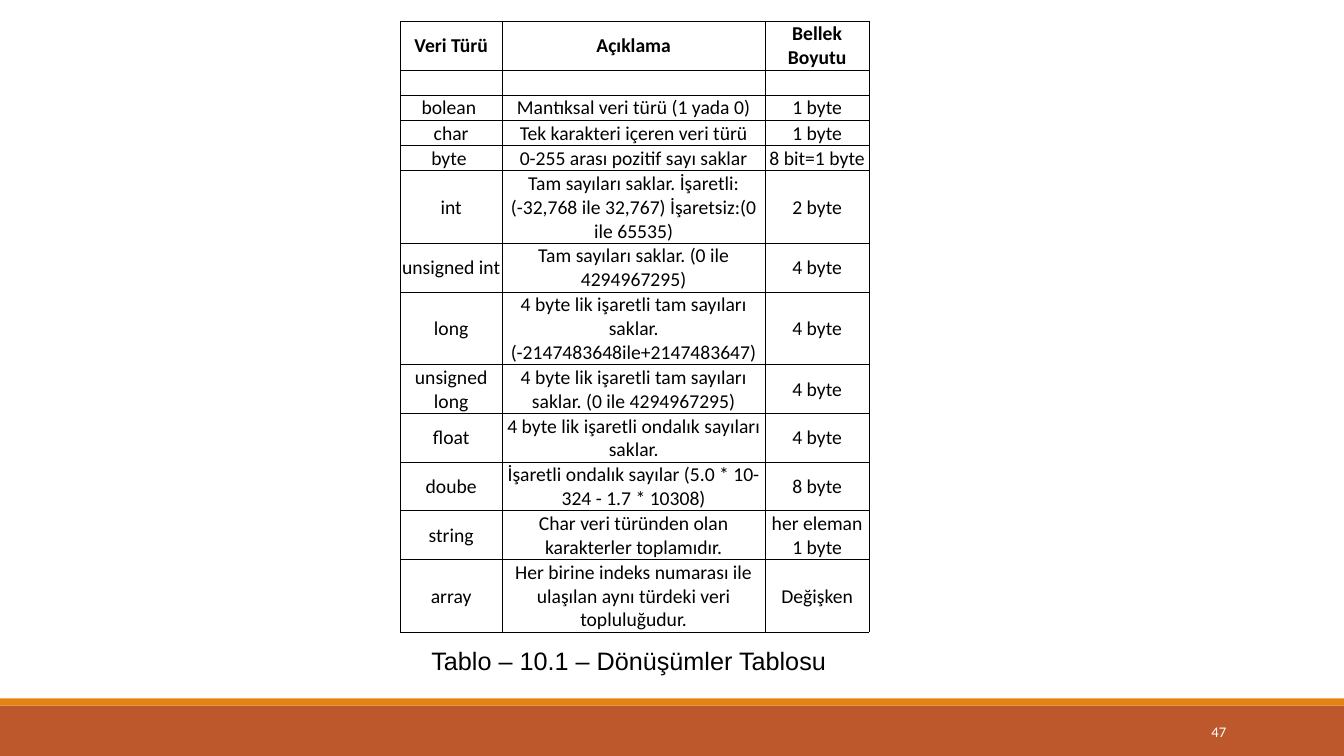
from lxml.etree import SubElement
from pptx import Presentation
from pptx.dml.color import RGBColor
from pptx.enum.shapes import MSO_SHAPE
from pptx.enum.text import MSO_ANCHOR, PP_ALIGN
from pptx.oxml.ns import qn
from pptx.util import Inches, Pt

ROWS = [
    (2, "Veri Türü", "Açıklama", "Bellek Boyutu"),
    (1, "", "", ""),
    (1, "bolean ", "Mantıksal veri türü (1 yada 0)", "1 byte"),
    (1, "char", "Tek karakteri içeren veri türü", "1 byte"),
    (1, "byte ", "0-255 arası pozitif sayı saklar", "8 bit=1 byte"),
    (3, "int", "Tam sayıları saklar. İşaretli: (-32,768 ile 32,767) İşaretsiz:(0 ile 65535)", "2 byte"),
    (2, "unsigned int", "Tam sayıları saklar. (0 ile 4294967295)", "4 byte"),
    (3, "long", "4 byte lik işaretli tam sayıları saklar. (-2147483648ile+2147483647)", "4 byte"),
    (2, "unsigned long", "4 byte lik işaretli tam sayıları saklar. (0 ile 4294967295)", "4 byte"),
    (2, "float", "4 byte lik işaretli ondalık sayıları saklar.", "4 byte"),
    (2, "doube", "İşaretli ondalık sayılar (5.0 * 10-324 - 1.7 * 10308)", "8 byte"),
    (2, "string", "Char veri türünden olan karakterler toplamıdır.", "her eleman 1 byte"),
    (3, "array", "Her birine indeks numarası ile ulaşılan aynı türdeki veri topluluğudur.", "Değişken"),
]
COL_WIDTHS = [1.01, 2.61, 1.03]
LINE_HEIGHTS = {1: 0.25, 2: 0.48, 3: 0.72}
BARS = [(7, 0.5, "BD582C"), (6.93, 0.07, "E48312")]
TEXTS = [
    ("Tablo – 10.1 – Dönüşümler Tablosu", (4.18, 6.35, 4.22, 0.4), 18, "Arial", "000000",
     PP_ALIGN.LEFT, MSO_ANCHOR.TOP, False),
    ("47", (10.83, 7.06, 1.43, 0.4), 10.5, "Calibri", "FFFFFF",
     PP_ALIGN.RIGHT, MSO_ANCHOR.MIDDLE, True),
]


def color(value):
    return RGBColor.from_string(value)


def write(tf, text, size, font, hex_color, align, bold=False):
    tf.text = text
    p = tf.paragraphs[0]
    p.alignment = align
    for r in p.runs:
        r.font.size = Pt(size)
        r.font.name = font
        r.font.bold = bold
        r.font.color.rgb = color(hex_color)
    if not text:
        SubElement(p._p, qn("a:endParaRPr"), sz=str(size * 100))


def add_borders(cell):
    pr = cell._tc.get_or_add_tcPr()
    for side in ("a:lnL", "a:lnR", "a:lnT", "a:lnB"):
        ln = SubElement(pr, qn(side), w=str(Pt(0.5)))
        fill = SubElement(ln, qn("a:solidFill"))
        SubElement(fill, qn("a:srgbClr"), val="000000")


def add_bar(s, top, height, fill):
    bar = s.shapes.add_shape(MSO_SHAPE.RECTANGLE, 0, Inches(top), prs.slide_width, Inches(height))
    bar.shadow.inherit = False
    bar.fill.solid()
    bar.fill.fore_color.rgb = color(fill)
    bar.line.fill.background()


def add_type_table(s):
    heights = [LINE_HEIGHTS[row[0]] for row in ROWS]
    frame = s.shapes.add_table(len(ROWS), len(COL_WIDTHS), Inches(3.97), Inches(0.21),
                               Inches(sum(COL_WIDTHS)), Inches(sum(heights)))
    table = frame.table
    table.horz_banding = False
    for column, width in zip(table.columns, COL_WIDTHS):
        column.width = Inches(width)
    for i, (lines, *values) in enumerate(ROWS):
        table.rows[i].height = Inches(heights[i])
        for j, value in enumerate(values):
            cell = table.cell(i, j)
            cell.margin_left = cell.margin_right = cell.margin_top = Inches(0.01)
            cell.margin_bottom = 0
            cell.vertical_anchor = MSO_ANCHOR.MIDDLE
            write(cell.text_frame, value, 14, "Calibri", "000000", PP_ALIGN.CENTER, i == 0)
            add_borders(cell)
            cell.fill.background()


prs = Presentation()
prs.slide_width, prs.slide_height = Inches(13.33), Inches(7.5)
s = prs.slides.add_slide(prs.slide_layouts[6])
for bar in BARS:
    add_bar(s, *bar)
add_type_table(s)
for text, box, size, font, hex_color, align, anchor, wrap in TEXTS:
    tf = s.shapes.add_textbox(*map(Inches, box)).text_frame
    tf.word_wrap = wrap
    tf.vertical_anchor = anchor
    write(tf, text, size, font, hex_color, align)
prs.save("out.pptx")
